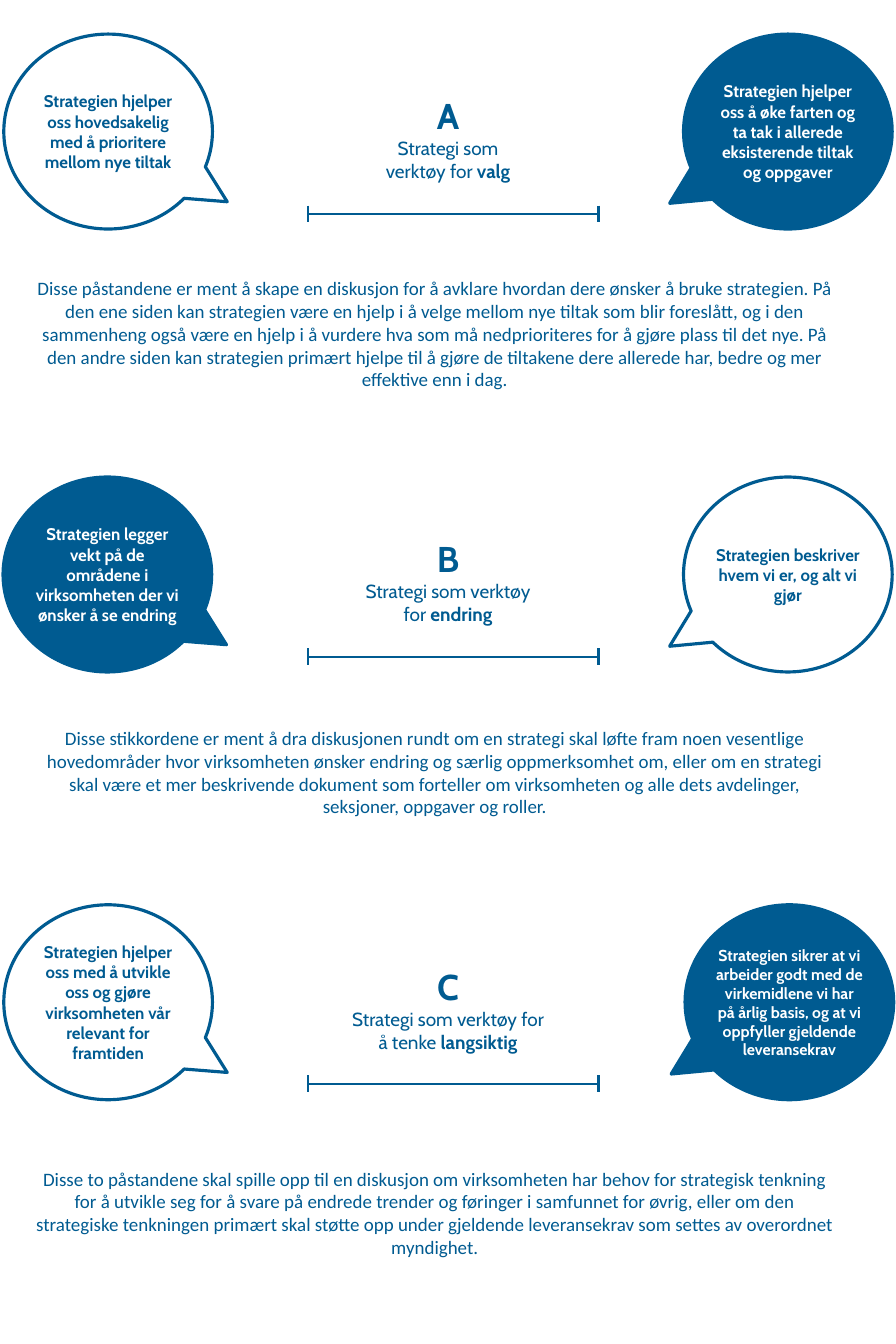
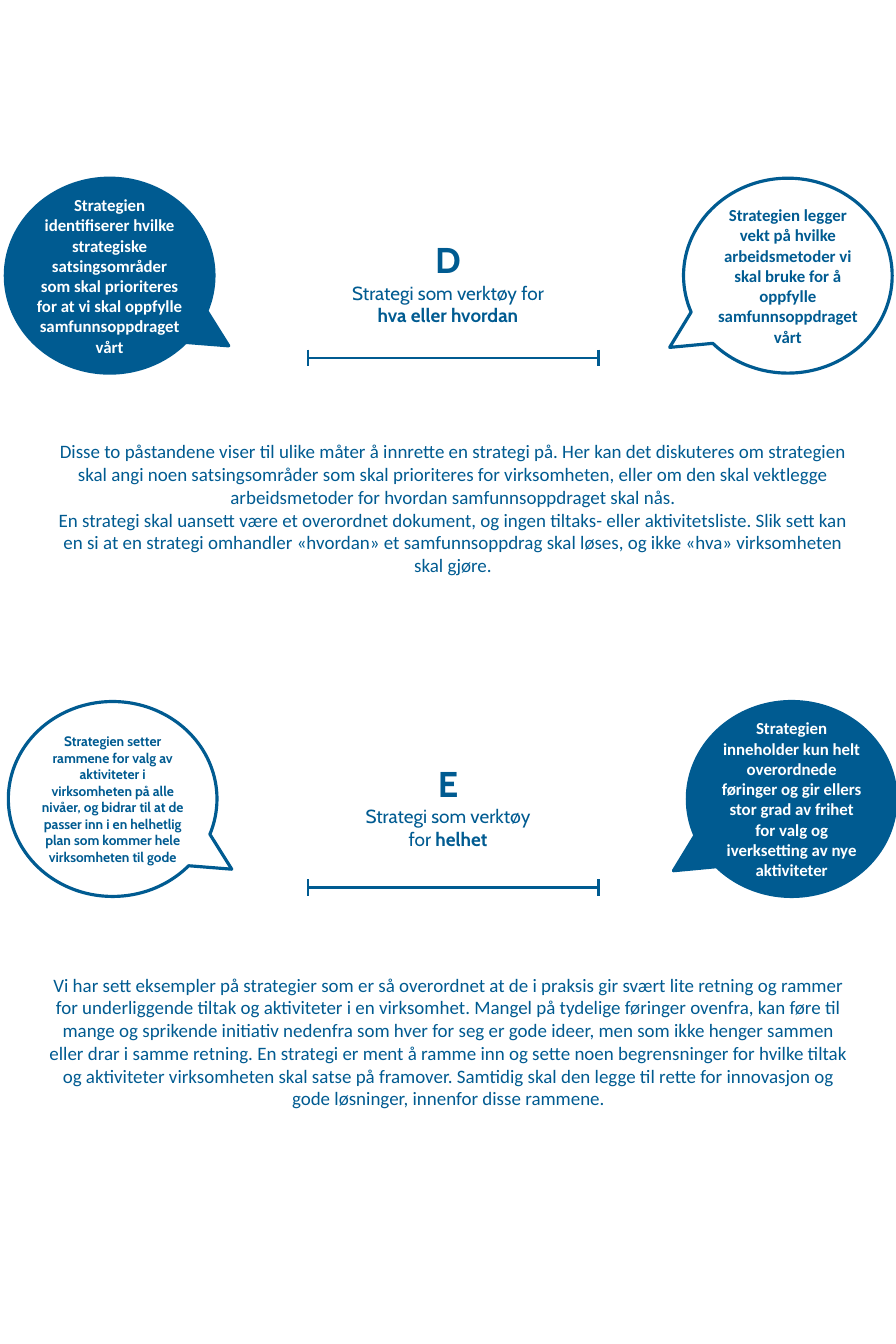
from dataclasses import dataclass

from lxml import etree
from pptx import Presentation
from pptx.dml.color import RGBColor
from pptx.enum.shapes import MSO_CONNECTOR as Connector, MSO_SHAPE as Shape
from pptx.enum.text import MSO_ANCHOR as Anchor, MSO_AUTO_SIZE as AutoSize, PP_ALIGN as Align
from pptx.oxml.ns import qn
from pptx.util import Pt

PX = 9144  # 100 px to the inch
SLIDE_WIDTH, SLIDE_HEIGHT = 1181, 1772
BLUE, WHITE = "005B91", "FFFFFF"
HEADING_FONT, BODY_FONT = "Cabin", "Calibri"
BUBBLE_WIDTH, BUBBLE_HEIGHT = 275, 257
BUBBLE_TAILS = {"left": (0.571, 0.36), "right": (-0.567, 0.368)}
HEADING_OFFSET, HEADING_HEIGHT = 74, 128
SCALE_LEFT, SCALE_RIGHT, CAP = 406, 789, 11
DESCRIPTION_WIDTH = 1072


@dataclass
class Bubble:
    left: int
    text: str
    font: str = HEADING_FONT
    size: int = 16


@dataclass
class Topic:
    letter: str
    top: int
    lead: str
    keyword: str
    heading_width: int
    scale_y: int
    filled_side: str
    left: Bubble
    right: Bubble
    description_box: tuple  # left, top, height
    description: list


SLIDES = [
    [
        Topic("A", 45, "Strategi som verktøy for ", "valg", 205, 282, "right",
              Bubble(5, "Strategien hjelper oss hovedsakelig med å prioritere mellom nye tiltak"),
              Bubble(901, "Strategien hjelper oss å øke farten og ta tak i allerede "
                          "eksisterende tiltak og oppgaver"),
              (37, 360, 162),
              ["Disse påstandene er ment å skape en diskusjon for å avklare hvordan dere ønsker "
               "å bruke strategien. På den ene siden kan strategien være en hjelp i å velge mellom "
               "nye tiltak som blir foreslått, og i den sammenheng også være en hjelp i å vurdere "
               "hva som må nedprioriteres for å gjøre plass til det nye. På den andre siden kan "
               "strategien primært hjelpe til å gjøre de tiltakene dere allerede har, bedre og mer "
               "effektive enn i dag."]),
        Topic("B", 629, "Strategi som verktøy for ", "endring", 244, 866, "left",
              Bubble(4, "Strategien legger vekt på de områdene i virksomheten der vi ønsker "
                        "å se endring"),
              Bubble(901, "Strategien beskriver hvem vi er, og alt vi gjør"),
              (37, 953, 131),
              ["Disse stikkordene er ment å dra diskusjonen rundt om en strategi skal løfte fram "
               "noen vesentlige hovedområder hvor virksomheten ønsker endring og særlig "
               "oppmerksomhet om, eller om en strategi skal være et mer beskrivende dokument som "
               "forteller om virksomheten og alle dets avdelinger, seksjoner, oppgaver og roller."]),
        Topic("C", 1193, "Strategi som verktøy for å tenke ", "langsiktig", 281, 1429, "right",
              Bubble(5, "Strategien hjelper oss med å utvikle oss og gjøre virksomheten vår "
                        "relevant for framtiden"),
              Bubble(903, "Strategien sikrer at vi arbeider godt med de virkemidlene vi har på "
                          "årlig basis, og at vi oppfyller gjeldende leveransekrav", size=15),
              (37, 1534, 131),
              ["Disse to påstandene skal spille opp til en diskusjon om virksomheten har behov for "
               "strategisk tenkning for å utvikle seg for å svare på endrede trender og føringer i "
               "samfunnet for øvrig, eller om den strategiske tenkningen primært skal støtte opp "
               "under gjeldende leveransekrav som settes av overordnet myndighet."]),
    ],
    [
        Topic("D", 235, "Strategi som verktøy for ", "hva eller hvordan", 281, 472, "left",
              Bubble(7, "Strategien identifiserer hvilke strategiske satsingsområder som skal "
                        "prioriteres for at vi skal oppfylle samfunnsoppdraget vårt", BODY_FONT),
              Bubble(901, "Strategien legger vekt på hvilke arbeidsmetoder vi skal bruke for å "
                          "oppfylle samfunnsoppdraget vårt", BODY_FONT),
              (61, 575, 192),
              ["Disse to påstandene viser til ulike måter å innrette en strategi på. Her kan det "
               "diskuteres om strategien skal angi noen satsingsområder som skal prioriteres for "
               "virksomheten, eller om den skal vektlegge arbeidsmetoder for hvordan "
               "samfunnsoppdraget skal nås.",
               "En strategi skal uansett være et overordnet dokument, og ingen tiltaks- eller "
               "aktivitetsliste. Slik sett kan en si at en strategi omhandler «hvordan» et "
               "samfunnsoppdrag skal løses, og ikke «hva» virksomheten skal gjøre."]),
        Topic("E", 925, "Strategi som verktøy for ", "helhet", 244, 1170, "right",
              Bubble(11, "Strategien setter rammene for valg av aktiviteter i virksomheten på alle "
                         "nivåer, og bidrar til at de passer inn i en helhetlig plan som kommer "
                         "hele virksomheten til gode", size=13),
              Bubble(906, "Strategien inneholder kun helt overordnede føringer og gir ellers stor "
                          "grad av frihet for valg og iverksetting av nye aktiviteter", BODY_FONT),
              (55, 1278, 192),
              ["Vi har sett eksempler på strategier som er så overordnet at de i praksis gir svært "
               "lite retning og rammer for underliggende tiltak og aktiviteter i en virksomhet. "
               "Mangel på tydelige føringer ovenfra, kan føre til mange og sprikende initiativ "
               "nedenfra som hver for seg er gode ideer, men som ikke henger sammen eller drar i "
               "samme retning. En strategi er ment å ramme inn og sette noen begrensninger for "
               "hvilke tiltak og aktiviteter virksomheten skal satse på framover. Samtidig skal "
               "den legge til rette for innovasjon og gode løsninger, innenfor disse rammene."]),
    ],
]


def color(hex_string):
    return RGBColor.from_string(hex_string)


def style_paragraph(paragraph, font_name, size, hex_string, bold=False):
    paragraph.alignment = Align.CENTER
    font = paragraph.font
    font.name, font.size, font.bold = font_name, Pt(size), bold
    font.color.rgb = color(hex_string)


presentation = Presentation()
presentation.slide_width = SLIDE_WIDTH * PX
presentation.slide_height = SLIDE_HEIGHT * PX
blank_layout = presentation.slide_layouts[6]

for topics in SLIDES:
    slide = presentation.slides.add_slide(blank_layout)
    shapes = slide.shapes

    for topic in topics:
        # Speech bubbles: one filled, one outlined
        for side, bubble in (("left", topic.left), ("right", topic.right)):
            filled = side == topic.filled_side
            callout = shapes.add_shape(Shape.OVAL_CALLOUT, bubble.left * PX, topic.top * PX,
                                       BUBBLE_WIDTH * PX, BUBBLE_HEIGHT * PX)
            callout.shadow.inherit = False
            callout.adjustments[0], callout.adjustments[1] = BUBBLE_TAILS[side]
            if filled:
                callout.fill.solid()
                callout.fill.fore_color.rgb = color(BLUE)
            else:
                callout.fill.background()
            callout.line.color.rgb = color(BLUE)
            callout.line.width = Pt(3)
            frame = callout.text_frame
            frame.word_wrap = True
            frame.vertical_anchor = Anchor.MIDDLE
            frame.margin_left = frame.margin_right = frame.margin_top = frame.margin_bottom = 0
            frame.text = bubble.text
            style_paragraph(frame.paragraphs[0], bubble.font, bubble.size,
                            WHITE if filled else BLUE, bold=True)

        # Letter and heading, centred on the slide
        heading = shapes.add_textbox((SLIDE_WIDTH - topic.heading_width) * PX // 2,
                                     (topic.top + HEADING_OFFSET) * PX,
                                     topic.heading_width * PX, HEADING_HEIGHT * PX)
        frame = heading.text_frame
        frame.word_wrap = True
        frame.auto_size = AutoSize.SHAPE_TO_FIT_TEXT
        frame.text = topic.letter
        style_paragraph(frame.paragraphs[0], HEADING_FONT, 34, BLUE, bold=True)
        paragraph = frame.add_paragraph()
        style_paragraph(paragraph, HEADING_FONT, 18, BLUE)
        paragraph.add_run().text = topic.lead
        keyword = paragraph.add_run()
        keyword.text = topic.keyword
        keyword.font.bold = True

        # Scale with a cap at each end
        y = topic.scale_y
        for x1, y1, x2, y2 in ((SCALE_LEFT, y, SCALE_RIGHT, y),
                               (SCALE_LEFT, y - CAP, SCALE_LEFT, y + CAP),
                               (SCALE_RIGHT, y - CAP, SCALE_RIGHT, y + CAP)):
            line = shapes.add_connector(Connector.STRAIGHT, x1 * PX, y1 * PX, x2 * PX, y2 * PX)
            line.line.color.rgb = color(BLUE)
            line.line.width = Pt(2.5)
            etree.SubElement(line.element.spPr, qn("a:effectLst"))

        left, top, height = topic.description_box
        description = shapes.add_shape(Shape.RECTANGLE, left * PX, top * PX,
                                       DESCRIPTION_WIDTH * PX, height * PX)
        description.shadow.inherit = False
        description.fill.solid()
        description.fill.fore_color.rgb = color(WHITE)
        description.line.fill.background()
        frame = description.text_frame
        frame.word_wrap = True
        frame.auto_size = AutoSize.SHAPE_TO_FIT_TEXT
        frame.vertical_anchor = Anchor.TOP
        frame.text = "\n".join(topic.description)
        for paragraph in frame.paragraphs:
            style_paragraph(paragraph, BODY_FONT, 18, BLUE)

presentation.save("out.pptx")
